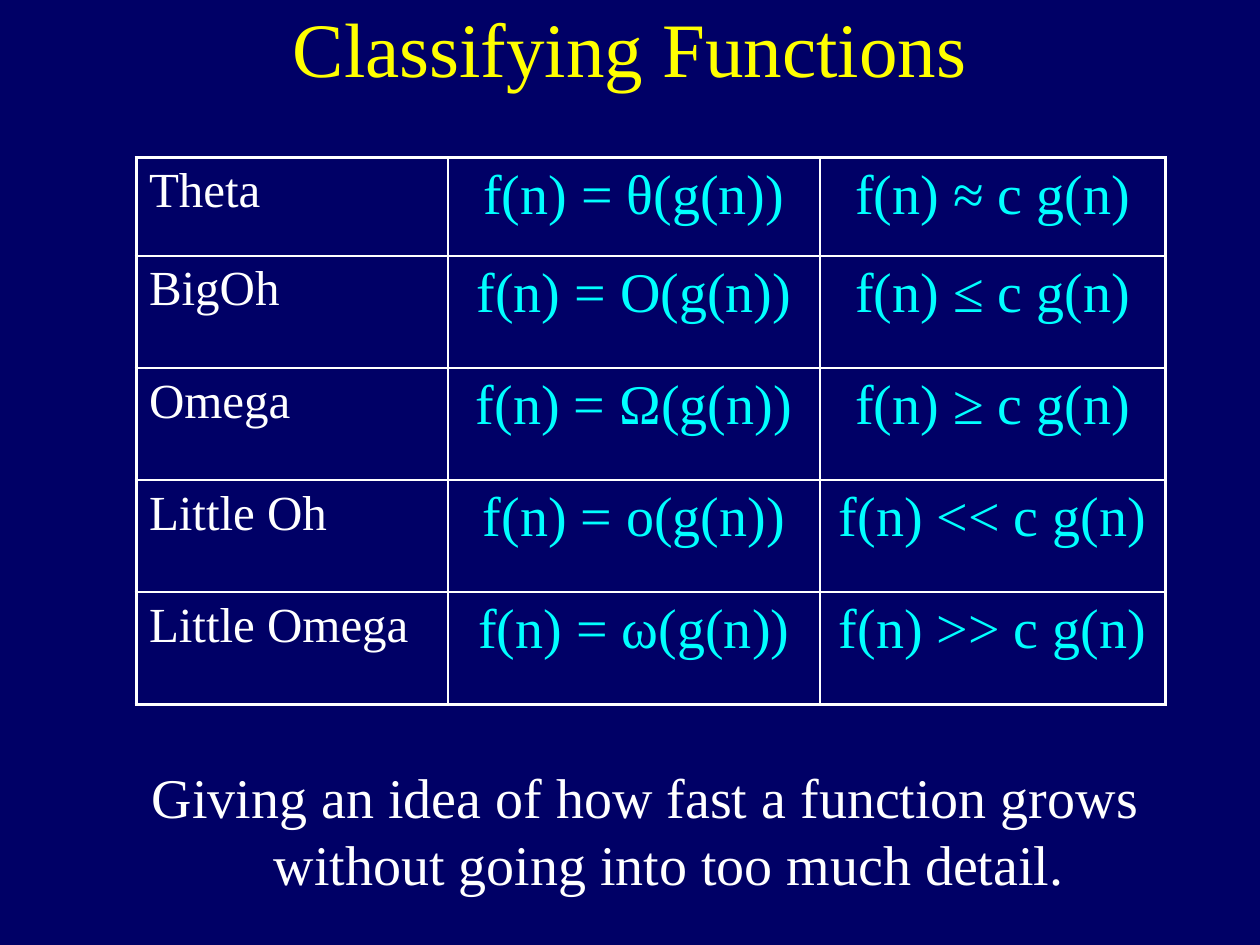
from lxml.etree import SubElement
from pptx import Presentation
from pptx.dml.color import RGBColor
from pptx.enum.text import MSO_ANCHOR as Anchor, PP_ALIGN as Align
from pptx.oxml.ns import qn
from pptx.util import Cm, Pt

NAVY = RGBColor(0x00, 0x00, 0x66)
WHITE = RGBColor(0xFF, 0xFF, 0xFF)
CYAN = RGBColor(0x00, 0xFF, 0xFF)
YELLOW = RGBColor(0xFF, 0xFF, 0x00)
FONT = "Times New Roman"

THIN, THICK = Pt(1), Pt(2.25)
WIDTHS = [6.28, 7.5, 6.96]
HEIGHTS = [1.98] + [2.26] * 4
ROWS = [
    ("Theta", "f(n) = θ(g(n))", "f(n) ≈ c g(n)"),
    ("BigOh", "f(n) = O(g(n))", "f(n) ≤ c g(n)"),
    ("Omega", "f(n) = Ω(g(n))", "f(n) ≥ c g(n)"),
    ("Little Oh", "f(n) = o(g(n))", "f(n) << c g(n)"),
    ("Little Omega", "f(n) = ω(g(n))", "f(n) >> c g(n)"),
]


def write(frame, text, size, color, align=Align.CENTER):
    par = frame.paragraphs[0]
    par.alignment = align
    run = par.add_run()
    run.text = text
    font = run.font
    font.name, font.size = FONT, Pt(size)
    font.color.rgb = color
    return par


def add_text(slide, box, text, size, color, anchor=Anchor.TOP):
    frame = slide.shapes.add_textbox(*map(Cm, box)).text_frame
    frame.word_wrap = True
    frame.vertical_anchor = anchor
    return write(frame, text, size, color)


def lead(par):
    """Put a gap of 20% of the line before the paragraph."""
    gap = SubElement(par._p.get_or_add_pPr(), qn("a:spcBef"))
    SubElement(gap, qn("a:spcPct"), val="20000")


def hang(par, depth):
    """Indent all lines but the first."""
    props = par._p.get_or_add_pPr()
    props.set("marL", str(depth))
    props.set("indent", str(-depth))


def rule(cell, row, col):
    """Draw cell borders, thick on the outer edge of the table."""
    outer = {
        "a:lnL": col == 0,
        "a:lnR": col == len(WIDTHS) - 1,
        "a:lnT": row == 0,
        "a:lnB": row == len(HEIGHTS) - 1,
    }
    props = cell._tc.get_or_add_tcPr()
    for tag, edge in outer.items():
        line = SubElement(props, qn(tag), w=str(THICK if edge else THIN))
        fill = SubElement(line, qn("a:solidFill"))
        SubElement(fill, qn("a:srgbClr"), val=str(WHITE))


def add_grid(slide, left, top):
    size = Cm(sum(WIDTHS)), Cm(sum(HEIGHTS))
    table = slide.shapes.add_table(
        len(ROWS), len(WIDTHS), Cm(left), Cm(top), *size).table
    table.first_row = table.horz_banding = False
    for column, width in zip(table.columns, WIDTHS):
        column.width = Cm(width)
    for row, (names, height) in enumerate(zip(ROWS, HEIGHTS)):
        table.rows[row].height = Cm(height)
        for col, text in enumerate(names):
            cell = table.cell(row, col)
            rule(cell, row, col)
            cell.fill.background()
            if col == 0:
                lead(write(cell.text_frame, text, 28, WHITE, Align.LEFT))
            else:
                write(cell.text_frame, text, 32, CYAN)


def main():
    deck = Presentation()
    deck.slide_width, deck.slide_height = Cm(25.4), Cm(19.05)
    slide = deck.slides.add_slide(deck.slide_layouts[6])
    back = slide.background.fill
    back.solid()
    back.fore_color.rgb = NAVY

    add_grid(slide, 2.75, 3.18)
    note = add_text(
        slide, (2.75, 15.24, 20.53, 4.88),
        "Giving an idea of how fast a function grows "
        "without going into too much detail.", 32, WHITE)
    lead(note)
    hang(note, Cm(0.95))
    add_text(slide, (1.9, -0.64, 21.6, 3.18),
             "Classifying Functions", 44, YELLOW, Anchor.MIDDLE)
    deck.save("out.pptx")


if __name__ == "__main__":
    main()
